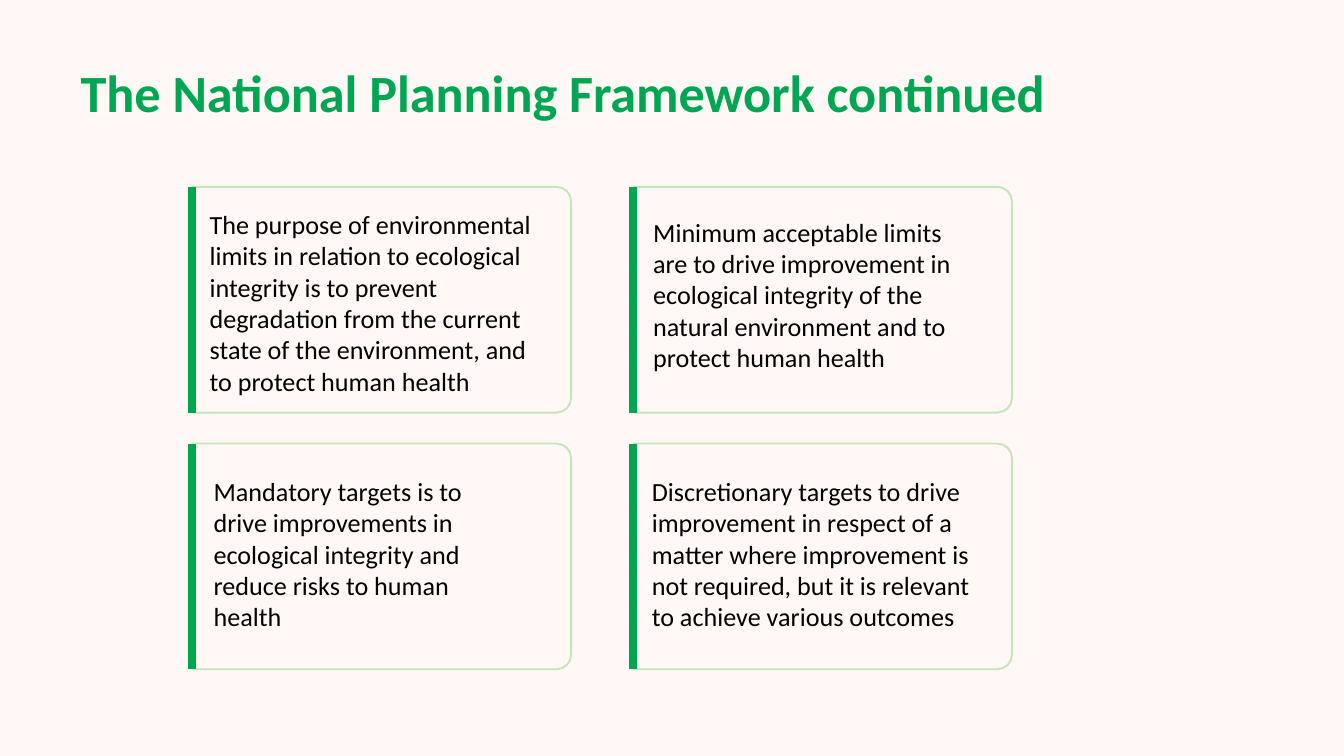
import math

from lxml import etree
from pptx import Presentation
from pptx.dml.color import RGBColor
from pptx.enum import shapes, text
from pptx.oxml import ns
from pptx.util import Inches, Pt

# Content: grid column, row, text box (left, top, width, height), left and right indent, wording
TITLE = "The National Planning Framework continued"
CARDS = [
    (0, 0, (1.43, 1.51, 2.87, 1.44), 0.13, 0.24,
     "The purpose of environmental limits in relation to ecological integrity is to prevent "
     "degradation from the current state of the environment, and to protect human health"),
    (0, 1, (1.46, 3.42, 2.73, 1.36), 0.13, 0.55,
     "Mandatory targets is to drive improvements in ecological integrity and reduce risks "
     "to human health"),
    (1, 1, (4.73, 3.42, 2.73, 1.36), 0.12, 0.16,
     "Discretionary targets to drive improvement in respect of a matter where improvement "
     "is not required, but it is relevant to achieve various outcomes"),
    (1, 0, (4.74, 1.45, 2.73, 1.44), 0.12, 0.3,
     "Minimum acceptable limits are to drive improvement in ecological integrity of the "
     "natural environment and to protect human health"),
]

# Style and grid
FONT = "Calibri"
CREAM = RGBColor(0xFF, 0xF8, 0xF5)
TITLE_GREEN = RGBColor(0x00, 0xA6, 0x51)
BAR_GREEN = RGBColor(0x00, 0xA7, 0x4F)
PALE_GREEN = RGBColor(0xC3, 0xE5, 0xB7)
BLACK = RGBColor(0, 0, 0)
GRID_LEFT, GRID_TOP = 1.43, 1.39
STEP_X, STEP_Y = 3.28, 1.91
CARD_WIDTH, CARD_HEIGHT, RADIUS = 2.82, 1.68, 0.11


def style_font(para, size, color, bold=False):
    font = para.font
    font.name, font.size, font.bold = FONT, Pt(size), bold
    font.color.rgb = color


def add_card_text(page, place, indent_left, indent_right, wording):
    box = page.shapes.add_textbox(*map(Inches, place))
    frame = box.text_frame
    frame.word_wrap = True
    frame.vertical_anchor = text.MSO_ANCHOR.MIDDLE
    frame.margin_left = frame.margin_right = frame.margin_bottom = 0
    frame.margin_top = Inches(0.04)
    para = frame.paragraphs[0]
    para.text = wording
    props = para._p.get_or_add_pPr()
    props.set("marL", str(Inches(indent_left)))
    props.set("marR", str(Inches(indent_right)))
    style_font(para, 14, BLACK)


def corner(center_x, center_y, start):
    """Quarter circle drawn from the start angle back by 90 degrees."""
    angles = [math.radians(start - 22.5 * step) for step in range(5)]
    return [(center_x + RADIUS * math.cos(a), center_y + RADIUS * math.sin(a)) for a in angles]


def add_card_frame(page, column, row):
    left, top = GRID_LEFT + column * STEP_X, GRID_TOP + row * STEP_Y
    right, bottom = left + CARD_WIDTH, top + CARD_HEIGHT
    card = page.shapes.add_group_shape()

    # Outline, open on the left and rounded on the right
    points = corner(right - RADIUS, bottom - RADIUS, 90)
    points += corner(right - RADIUS, top + RADIUS, 0)
    points.append((left, top))
    builder = card.shapes.build_freeform(Inches(left), Inches(bottom))
    builder.add_line_segments([(Inches(x), Inches(y)) for x, y in points], close=False)
    outline = builder.convert_to_shape()
    outline.shadow.inherit = False
    outline.fill.background()
    outline.line.color.rgb = PALE_GREEN
    outline.line.width = Pt(1)

    # Accent bar on the left
    bar = card.shapes.add_connector(shapes.MSO_CONNECTOR.STRAIGHT, Inches(left), Inches(top),
                                    Inches(left), Inches(bottom))
    bar.line.color.rgb = BAR_GREEN
    bar.line.width = Pt(4)
    etree.SubElement(bar._element.spPr, ns.qn("a:effectLst"))


def main():
    deck = Presentation()
    deck.slide_width, deck.slide_height = Inches(10), Inches(10 * 9 / 16)
    page = deck.slides.add_slide(deck.slide_layouts[5])
    page.background.fill.solid()
    page.background.fill.fore_color.rgb = CREAM

    # Title
    title = page.shapes.title
    title.left, title.top, title.width, title.height = map(Inches, (0.5, 0.4, 9, 0.59))
    title.text_frame.vertical_anchor = text.MSO_ANCHOR.TOP
    para = title.text_frame.paragraphs[0]
    para.text = TITLE
    para.alignment = text.PP_ALIGN.LEFT
    style_font(para, 28, TITLE_GREEN, bold=True)

    # Cards
    for _, _, place, indent_left, indent_right, wording in CARDS:
        add_card_text(page, place, indent_left, indent_right, wording)
    for column, row, *_ in CARDS:
        add_card_frame(page, column, row)

    deck.save("out.pptx")


if __name__ == "__main__":
    main()
